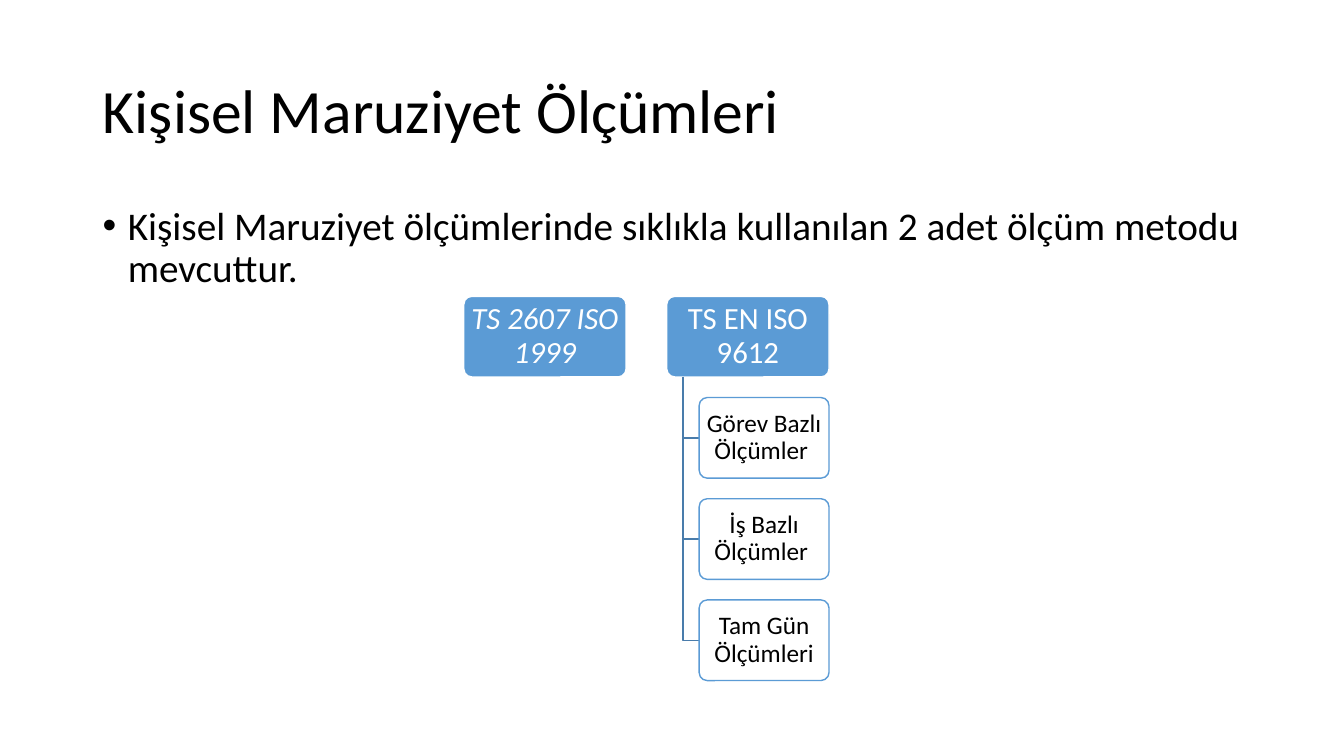
from lxml.etree import SubElement
from pptx import Presentation
from pptx.dml.color import RGBColor
from pptx.enum.shapes import MSO_SHAPE
from pptx.enum.text import MSO_ANCHOR, MSO_AUTO_SIZE, PP_ALIGN
from pptx.oxml.ns import qn
from pptx.util import Inches, Pt

TITLE = "Kişisel Maruziyet Ölçümleri"
INTRO = "Kişisel Maruziyet ölçümlerinde sıklıkla kullanılan 2 adet ölçüm metodu mevcuttur."
# Each method: name, italic, its measurement strategies
METHODS = [
    ("TS 2607 ISO 1999", True, []),
    ("TS EN ISO 9612", False,
     ["Görev Bazlı Ölçümler ", "İş Bazlı Ölçümler ", "Tam Gün Ölçümleri"]),
]

FONT = "Calibri"
BLACK = RGBColor(0x00, 0x00, 0x00)
WHITE = RGBColor(0xFF, 0xFF, 0xFF)
BLUE = RGBColor(0x5B, 0x9B, 0xD5)
BRANCH_BLUE = RGBColor(0x49, 0x7C, 0xAB)

MARGIN, CONTENT_WIDTH = 0.92, 11.5
TREE_LEFT, TREE_TOP = 4.6, 2.94
METHOD_WIDTH, BOX_HEIGHT = 1.61, 0.8
COLUMN_STEP = METHOD_WIDTH * 1.25
ROW_STEP = BOX_HEIGHT * 1.255
TRUNK_INDENT = METHOD_WIDTH * 0.1
CHILD_INDENT = METHOD_WIDTH * 0.2
CHILD_WIDTH = METHOD_WIDTH - CHILD_INDENT


def write(frame, text, size, color, align=PP_ALIGN.LEFT, italic=None):
    frame.text = text
    frame.word_wrap = True
    para = frame.paragraphs[0]
    para.alignment = align
    para.line_spacing = 0.9
    font = para.runs[0].font
    font.name, font.size, font.italic = FONT, Pt(size), italic
    font.color.rgb = color
    return para


def add_box(page, left, top, width, text, size, fill, line, color, italic=None):
    box = page.shapes.add_shape(MSO_SHAPE.ROUNDED_RECTANGLE, Inches(left), Inches(top),
                                Inches(width), Inches(BOX_HEIGHT))
    box.adjustments[0] = 0.1
    box.shadow.inherit = False
    box.fill.solid()
    box.fill.fore_color.rgb = fill
    box.line.color.rgb = line
    box.line.width = Pt(1)
    frame = box.text_frame
    frame.margin_left = frame.margin_right = Inches(0.04)
    frame.margin_top = frame.margin_bottom = Inches(0.04)
    frame.vertical_anchor = MSO_ANCHOR.MIDDLE
    write(frame, text, size, color, PP_ALIGN.CENTER, italic)


def add_branch(page, x, top, end_x, end_y):
    """Draw an elbow line down from the method and across to a strategy."""
    builder = page.shapes.build_freeform(Inches(x), Inches(top))
    builder.add_line_segments([(Inches(x), Inches(end_y)), (Inches(end_x), Inches(end_y))],
                              close=False)
    branch = builder.convert_to_shape()
    branch.shadow.inherit = False
    branch.fill.background()
    branch.line.color.rgb = BRANCH_BLUE
    branch.line.width = Pt(1)


def add_title(page):
    title = page.shapes.title
    title.left, title.top = Inches(MARGIN), Inches(0.4)
    title.width, title.height = Inches(CONTENT_WIDTH), Inches(1.45)
    title.text_frame.auto_size = MSO_AUTO_SIZE.NONE
    title.text_frame.vertical_anchor = MSO_ANCHOR.MIDDLE
    write(title.text_frame, TITLE, 44, BLACK)


def add_intro(page):
    intro = page.shapes.add_textbox(Inches(MARGIN), Inches(2), Inches(CONTENT_WIDTH), Inches(0.9))
    para = write(intro.text_frame, INTRO, 28, BLACK)
    settings = para._p.get_or_add_pPr()
    settings.set("marL", str(Inches(0.25)))
    settings.set("indent", str(-Inches(0.25)))
    SubElement(settings, qn("a:buFont")).set("typeface", "Arial")
    SubElement(settings, qn("a:buChar")).set("char", "•")


def add_tree(page):
    for column, (method, italic, strategies) in enumerate(METHODS):
        left = TREE_LEFT + column * COLUMN_STEP
        add_box(page, left, TREE_TOP, METHOD_WIDTH, method, 22, BLUE, WHITE, WHITE, italic)
        child_left = left + CHILD_INDENT
        for row, strategy in enumerate(strategies, start=1):
            top = TREE_TOP + row * ROW_STEP
            add_branch(page, left + TRUNK_INDENT, TREE_TOP + BOX_HEIGHT,
                       child_left, top + BOX_HEIGHT / 2)
            add_box(page, child_left, top, CHILD_WIDTH, strategy, 18, WHITE, BLUE, BLACK)


def main():
    deck = Presentation()
    deck.slide_width, deck.slide_height = Inches(13.33), Inches(7.5)
    page = deck.slides.add_slide(deck.slide_layouts.get_by_name("Title Only"))
    add_title(page)
    add_intro(page)
    add_tree(page)
    deck.save("out.pptx")


if __name__ == "__main__":
    main()
